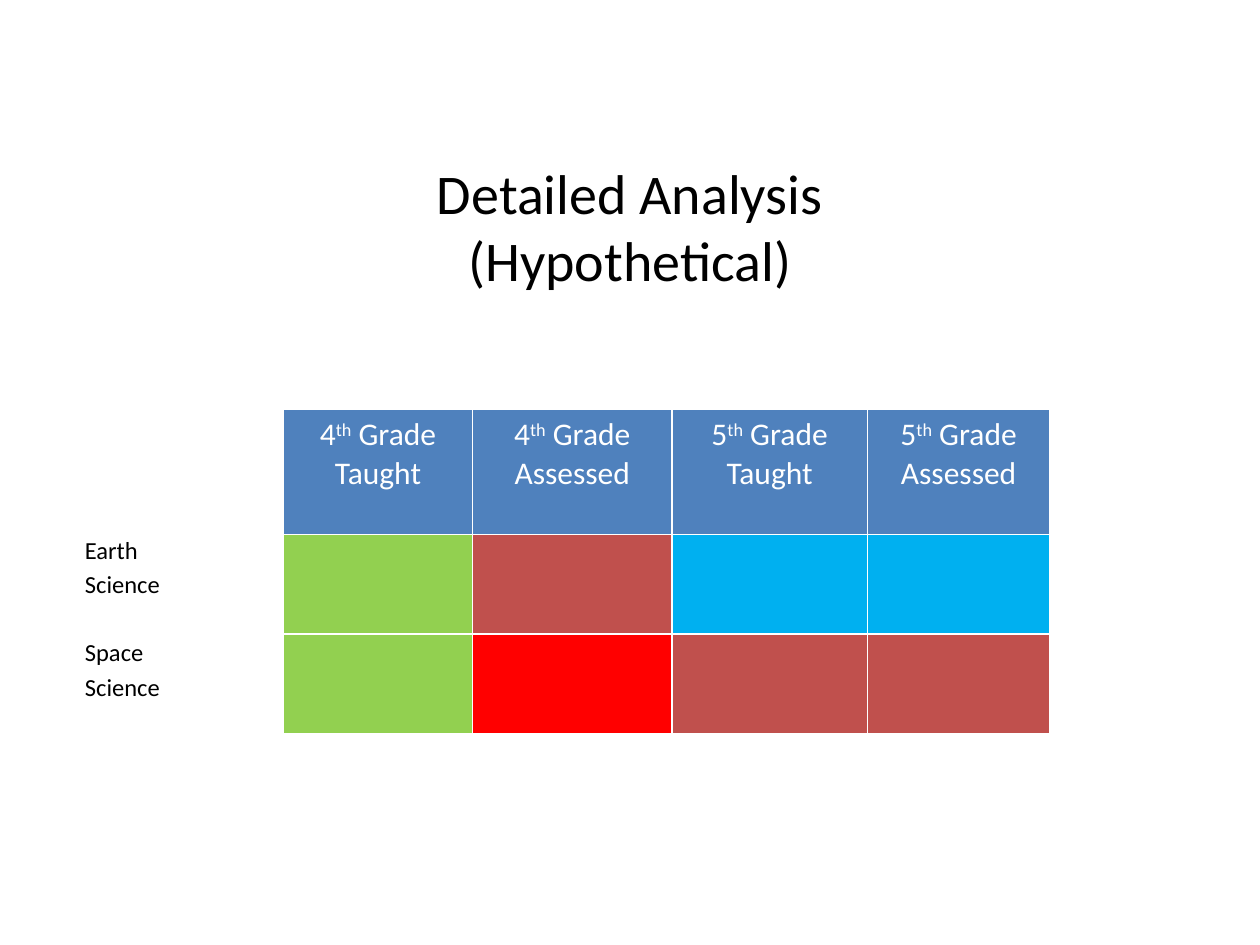
from lxml import etree
from pptx import Presentation
from pptx.dml.color import RGBColor
from pptx.enum.text import MSO_ANCHOR, PP_ALIGN
from pptx.oxml.ns import qn
from pptx.util import Pt

CENTER, LEFT = PP_ALIGN.CENTER, PP_ALIGN.LEFT
MIDDLE, TOP = MSO_ANCHOR.MIDDLE, MSO_ANCHOR.TOP

FONT = "Calibri"
BLACK, WHITE = "000000", "FFFFFF"
BLUE, GREEN, MAROON, SKY, RED = "4F81BD", "92D050", "C0504D", "00B0F0", "FF0000"

TITLE = "Detailed Analysis\v(Hypothetical)"
HEADERS = [
    ("4", "th", " Grade Taught"),
    ("4", "th", " Grade Assessed"),
    ("5", "th", " Grade Taught"),
    ("5", "th", " Grade Assessed"),
]
SUBJECTS = [("Earth", "Science"), ("Space", "Science")]
RATINGS = [
    (GREEN, MAROON, SKY, SKY),
    (GREEN, RED, MAROON, MAROON),
]
COLUMN_WIDTHS = (108, 114, 111.6, 104.4)
ROW_HEIGHTS = (71.3, 57.1, 57.1)
TABLE_LEFT, TABLE_TOP = 162, 234
LINE_GAP, SUBJECT_GAP = 2.8, 22


def color(value):
    return RGBColor.from_string(value)


def style_span(span, size, value):
    span.font.name = FONT
    span.font.size = Pt(size)
    span.font.bold = False
    span.font.color.rgb = color(value)


def add_text(page, frame, lines, size, align, anchor):
    box = page.shapes.add_textbox(*map(Pt, frame))
    text_frame = box.text_frame
    text_frame.word_wrap = True
    text_frame.vertical_anchor = anchor
    text_frame.margin_top = text_frame.margin_bottom = 0
    text_frame.text = "\n".join(lines)
    for para in text_frame.paragraphs:
        para.alignment = align
        for span in para.runs:
            style_span(span, size, BLACK)
    return text_frame


def paint_cell(cell, value):
    """Fill a cell and give it thin white borders."""
    properties = cell._tc.get_or_add_tcPr()
    for side in ("a:lnL", "a:lnR", "a:lnT", "a:lnB"):
        line = etree.SubElement(properties, qn(side), w=str(Pt(1)))
        fill = etree.SubElement(line, qn("a:solidFill"))
        etree.SubElement(fill, qn("a:srgbClr"), val=WHITE)
    cell.fill.solid()
    cell.fill.fore_color.rgb = color(value)


def write_header(cell, parts):
    para = cell.text_frame.paragraphs[0]
    para.alignment = CENTER
    for part in parts:
        span = para.add_run()
        span.text = part
        style_span(span, 18, WHITE)
    para.runs[1].font._element.set("baseline", "30000")


def add_ratings(page):
    table = page.shapes.add_table(
        len(ROW_HEIGHTS), len(COLUMN_WIDTHS), Pt(TABLE_LEFT), Pt(TABLE_TOP),
        Pt(sum(COLUMN_WIDTHS)), Pt(sum(ROW_HEIGHTS))).table
    table.first_row = table.horz_banding = False
    for column, width in zip(table.columns, COLUMN_WIDTHS):
        column.width = Pt(width)
    for row, height in zip(table.rows, ROW_HEIGHTS):
        row.height = Pt(height)
    for row, fills in zip(table.rows, [(BLUE,) * len(HEADERS)] + RATINGS):
        for cell, value in zip(row.cells, fills):
            paint_cell(cell, value)
    for cell, parts in zip(table.rows[0].cells, HEADERS):
        write_header(cell, parts)


def add_subjects(page):
    lines = [line for subject in SUBJECTS for line in subject]
    text_frame = add_text(page, (41.4, 305.7, 110, 110), lines, 14, LEFT, TOP)
    for number, para in enumerate(text_frame.paragraphs, 1):
        ends_subject = number % len(SUBJECTS[0]) == 0
        para.space_after = Pt(SUBJECT_GAP if ends_subject else LINE_GAP)


def main():
    deck = Presentation()
    deck.slide_width, deck.slide_height = Pt(720), Pt(540)
    page = deck.slides.add_slide(deck.slide_layouts[6])
    add_text(page, (66, 84, 588, 90), [TITLE], 32, CENTER, MIDDLE)
    add_subjects(page)
    add_ratings(page)
    deck.save("out.pptx")


if __name__ == "__main__":
    main()
